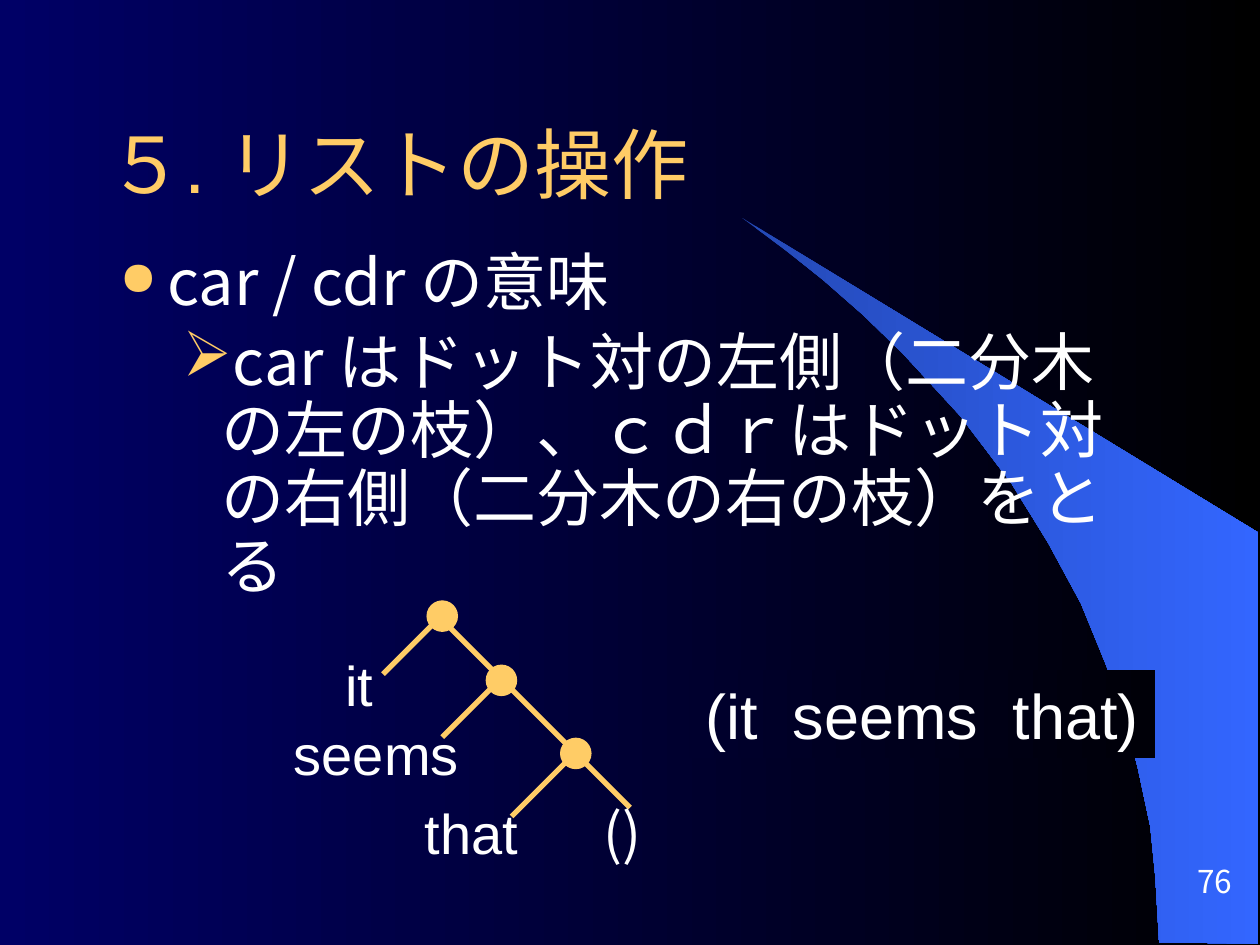
from lxml import etree
from pptx import Presentation
from pptx import util as u
from pptx.dml.color import RGBColor
from pptx.enum import shapes, text
from pptx.oxml import ns

PX = 9144  # EMU per px, 100 px to the inch

# Theme
THEME = dict(navy="000066", black="000000", gold="FFCC66", white="FFFFFF",
             swoosh_dark="2449B6", swoosh="3366FF", panel_left="00002E", panel_right="000008",
             latin="Arial", asian="Noto Sans CJK JP",
             title=44, body=36, label=32, number=18)

# Content
TITLE = "５. リストの操作"
BULLETS = [  # text, bullet, bullet size %, margin, hanging indent
    ("car / cdr の意味", "●", 75, 38, 38),
    ("car はドット対の左側（二分木の左の枝）、ｃｄｒはドット対の右側（二分木の右の枝）をとる",
     "➢", 100, 81, 31),
]
LIST_TEXT = "(it  seems  that)"
PAGE_NUMBER = "76"
SWOOSH = [(920, 748), (999, 749), (999, 423), (589, 173), (624, 199), (653, 222), (685, 250),
          (716, 280), (762, 330), (803, 384), (832, 431), (858, 479), (878, 528), (893, 572),
          (903, 609), (913, 656), (917, 696)]

# Binary tree: every edge runs at 45 degrees
SPINE = (351, 492, 149)  # x, y, run
BRANCHES = [(351, 488), (398, 538), (453, 601)]
BRANCH_RUN = 47
NODES = [(339, 477), (386, 528), (445, 586)]
NODE_SIZE = 24
LABELS = [  # text, left, top, width, alignment, font
    ("it", 219, 530, 87, "RIGHT", "latin"),
    ("seems", 209, 585, 165, "RIGHT", "latin"),
    ("that", 327, 648, 94, "RIGHT", "latin"),
    ("()", 469, 648, 87, "LEFT", "asian"),
]


def px(*values):
    return [u.Emu(value * PX) for value in values]


def color(name):
    return RGBColor.from_string(THEME[name])


def gradient(fill, start, end):
    fill.gradient()
    fill.gradient_angle = 0
    for stop, name in zip(fill.gradient_stops, (start, end)):
        stop.color.rgb = color(name)


def child(parent, tag, **attributes):
    return etree.SubElement(parent, ns.qn(tag), attributes)


def write(para, words, size="label", font="latin", ink="white", align="LEFT",
          line=None, before=None):
    span = para.add_run()
    span.text = words
    span.font.size, span.font.name = u.Pt(THEME[size]), THEME[font]
    span.font.color.rgb = color(ink)
    child(span.font._element, "a:ea", typeface=THEME["asian"])
    para.alignment = text.PP_ALIGN[align]
    if line:
        para.line_spacing = line
    if before:  # percentage of the type size
        para.space_before = u.Pt(0)
        spacing = para._p.pPr.find(ns.qn("a:spcBef"))
        spacing.remove(spacing[0])
        child(spacing, "a:spcPct", val=str(before * 1000))


def bullet(para, mark, percent, margin, hang):
    props = para._p.get_or_add_pPr()
    props.set("marL", str(margin * PX))
    props.set("indent", str(-hang * PX))
    child(child(props, "a:buClr"), "a:srgbClr", val=THEME["gold"])
    child(props, "a:buSzPct", val=str(percent * 1000))
    child(props, "a:buChar", char=mark)


def text_box(page, left, top, width, height, wrap=True):
    frame = page.shapes.add_textbox(*px(left, top, width, height)).text_frame
    frame.word_wrap = wrap
    return frame


def edge(page, x, y, dx, dy):
    link = page.shapes.add_connector(shapes.MSO_CONNECTOR.STRAIGHT, *px(x, y, x + dx, y + dy))
    link.line.color.rgb, link.line.width = color("gold"), u.Pt(3)
    child(link._element.spPr, "a:effectLst")


def add_swoosh(page):
    builder = page.shapes.build_freeform(*SWOOSH[0], scale=PX)
    builder.add_line_segments(SWOOSH[1:], close=True)
    swoosh = builder.convert_to_shape()
    swoosh.shadow.inherit = False
    gradient(swoosh.fill, "swoosh_dark", "swoosh")
    swoosh.line.fill.background()


def add_title(page):
    title = page.shapes.title
    title.left, title.top, title.width, title.height = px(75, 67, 884, 125)
    frame = title.text_frame
    frame.vertical_anchor = text.MSO_ANCHOR.MIDDLE
    frame.auto_size = text.MSO_AUTO_SIZE.NONE
    write(frame.paragraphs[0], TITLE, size="title", ink="gold")


def add_body(page):
    frame = text_box(page, 75, 194, 850, 252)
    frame.margin_left, frame.margin_right = px(20, 20)
    for index, (words, *mark) in enumerate(BULLETS):
        para = frame.add_paragraph() if index else frame.paragraphs[0]
        write(para, words, size="body", font="asian", line=0.9, before=20)
        bullet(para, *mark)


def add_tree(page):
    x, y, run = SPINE
    edge(page, x, y, run, run)
    for x, y in BRANCHES:
        edge(page, x, y, -BRANCH_RUN, BRANCH_RUN)
    for x, y in NODES:
        node = page.shapes.add_shape(shapes.MSO_SHAPE.OVAL, *px(x, y, NODE_SIZE, NODE_SIZE))
        node.shadow.inherit = False
        node.fill.solid()
        node.fill.fore_color.rgb = node.line.color.rgb = color("gold")
        node.line.width = u.Pt(0.75)
    for words, left, top, width, align, font in LABELS:
        frame = text_box(page, left, top, width, 42)
        frame.auto_size = text.MSO_AUTO_SIZE.SHAPE_TO_FIT_TEXT
        write(frame.paragraphs[0], words, font=font, align=align, line=0.6, before=50)


def add_list_panel(page):
    panel = page.shapes.add_shape(shapes.MSO_SHAPE.RECTANGLE, *px(547, 532, 370, 70))
    panel.shadow.inherit = False
    gradient(panel.fill, "panel_left", "panel_right")
    panel.line.fill.background()
    frame = panel.text_frame
    frame.word_wrap = True
    frame.vertical_anchor = text.MSO_ANCHOR.TOP
    frame.auto_size = text.MSO_AUTO_SIZE.SHAPE_TO_FIT_TEXT
    write(frame.paragraphs[0], LIST_TEXT, size="body", align="CENTER", before=50)


def add_page_number(page):
    frame = text_box(page, 886, 672, 102, 42, wrap=False)
    frame.margin_top = frame.margin_bottom = 0
    frame.vertical_anchor = text.MSO_ANCHOR.BOTTOM
    write(frame.paragraphs[0], PAGE_NUMBER, size="number", font="asian", align="RIGHT")


def main():
    deck = Presentation()
    deck.slide_width, deck.slide_height = px(1000, 750)
    page = deck.slides.add_slide(deck.slide_layouts[5])
    gradient(page.background.fill, "navy", "black")
    for add_part in (add_swoosh, add_title, add_body, add_page_number, add_tree, add_list_panel):
        add_part(page)
    deck.save("out.pptx")


if __name__ == "__main__":
    main()
